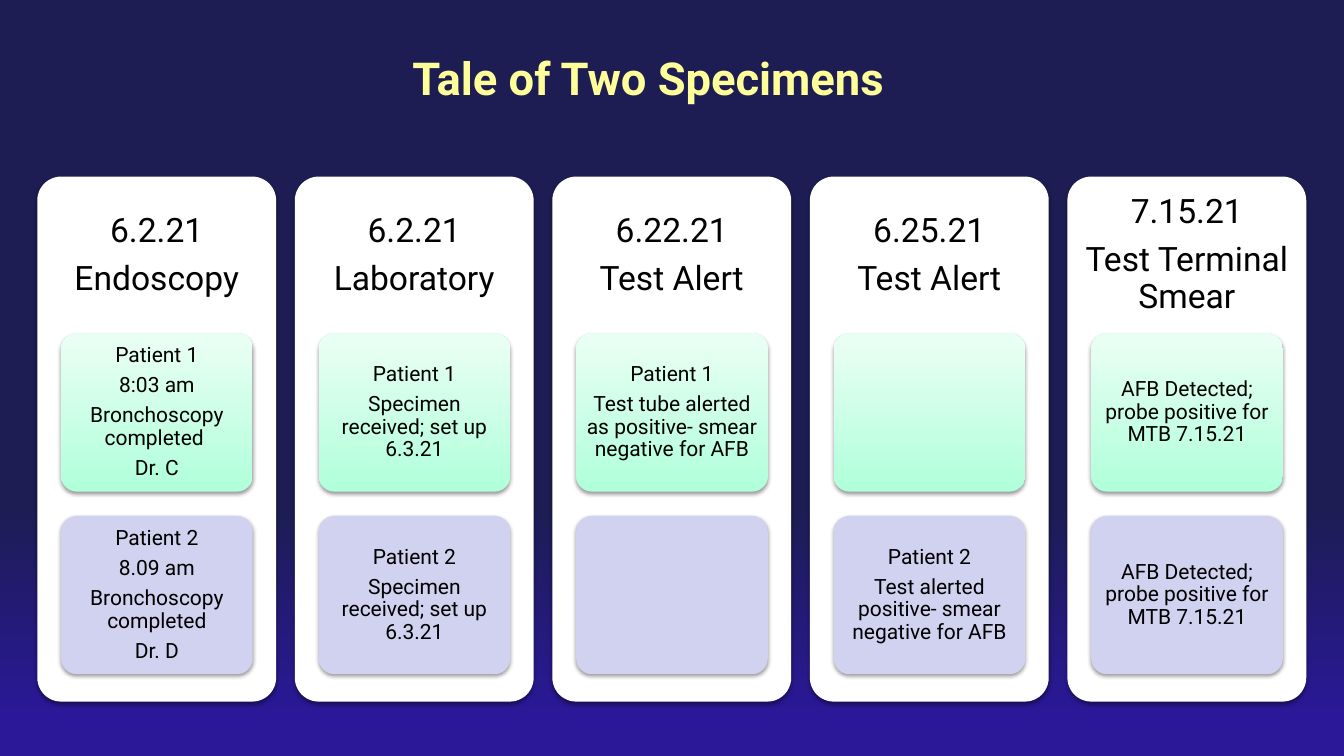
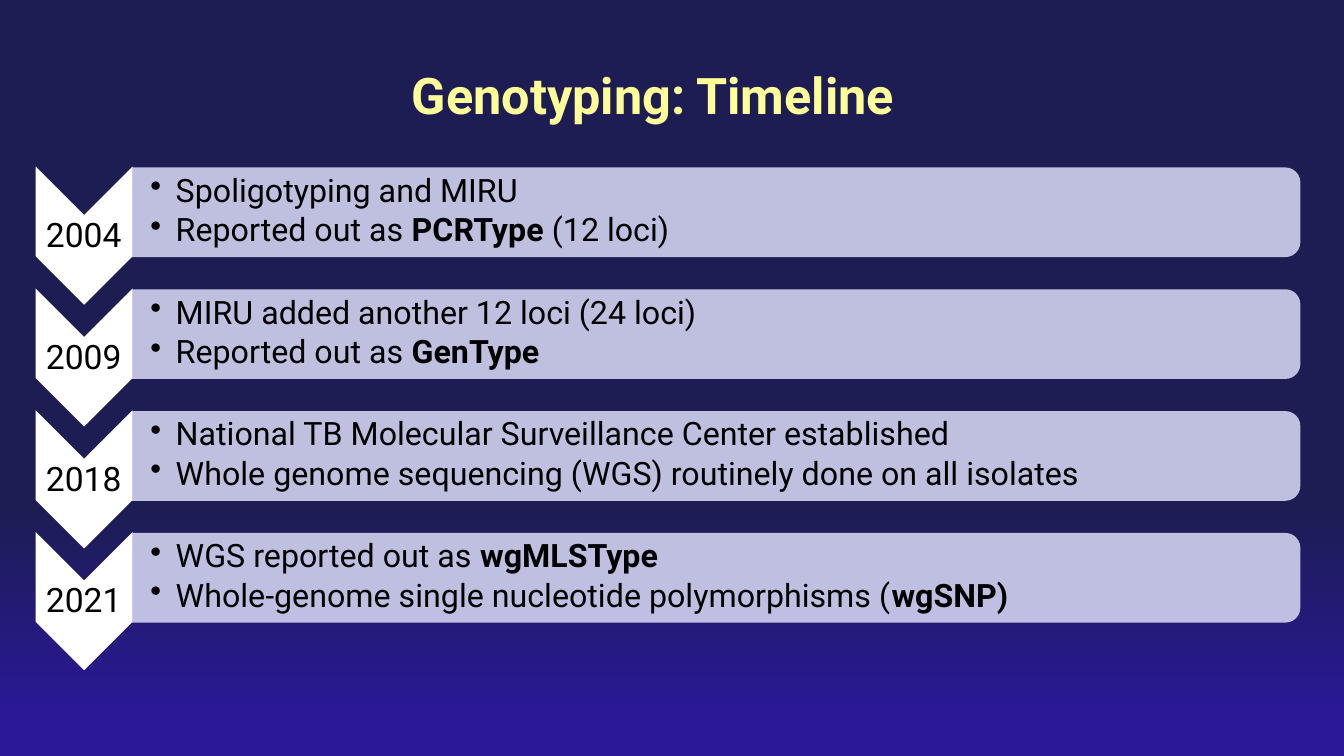
from lxml.etree import SubElement
from pptx import Presentation
from pptx.dml.color import RGBColor
from pptx.enum.shapes import MSO_SHAPE
from pptx.enum.text import MSO_ANCHOR, MSO_AUTO_SIZE, PP_ALIGN
from pptx.oxml.ns import qn
from pptx.util import Cm, Pt

FONT = "Roboto"
NAVY, VIOLET, YELLOW = "1D1D53", "2A1898", "FFFF99"
WHITE, BLACK, LILAC, MIST = "FFFFFF", "000000", "D1D1F0", "D1D1EF"
MINT, PALE = "B0FFDA", "EAFFF4"
rgb = RGBColor.from_string


def block(slide, kind, box, *fills):
    """Add a borderless shape; two fills make a gradient from bottom to top."""
    shape = slide.shapes.add_shape(kind, *map(Cm, box))
    shape.shadow.inherit = False
    shape.line.fill.background()
    if len(fills) == 1:
        shape.fill.solid()
        shape.fill.fore_color.rgb = rgb(fills[0])
    else:
        shape.fill.gradient()
        shape.fill.gradient_angle = 90
        for stop, fill in zip(shape.fill.gradient_stops, fills):
            stop.color.rgb = rgb(fill)
    return shape


def write(shape, lines, size, gap, pads, align=PP_ALIGN.CENTER):
    """Fill a shape with lines; *stars* mark bold, pads run left, top, right, bottom."""
    frame = shape.text_frame
    frame.word_wrap = True
    frame.vertical_anchor = MSO_ANCHOR.MIDDLE
    (frame.margin_left, frame.margin_top,
     frame.margin_right, frame.margin_bottom) = map(Cm, pads)
    frame.text = "\n".join(lines).replace("*", "")
    for para, line in zip(frame.paragraphs, lines):
        para.alignment = align
        para.line_spacing = 0.9
        para.space_after = Pt(size * gap)
        para.text = ""
        for i, bit in enumerate(line.split("*")):
            if bit:
                run = para.add_run()
                run.text = bit
                run.font.name = FONT
                run.font.size = Pt(size)
                run.font.bold = i % 2 == 1
                run.font.color.rgb = rgb(BLACK)


deck = Presentation()
deck.slide_width, deck.slide_height = Cm(33.87), Cm(19.05)

# Shared background
back = deck.slide_master.background.fill
back.gradient()
back.gradient_angle = 270
for stop, place, tone in zip(back.gradient_stops, (0.67, 0.95), (NAVY, VIOLET)):
    stop.position = place
    stop.color.rgb = rgb(tone)

# Slides and titles
slides = []
for text, size, box in [
    ("Tale of Two Specimens", 32.4, (1.73, 1.37, 29.21, 1.4)),
    ("Genotyping: Timeline", 36, (2.03, 1.09, 28.85, 2.18)),
]:
    slide = deck.slides.add_slide(deck.slide_layouts[5])
    title = slide.shapes.title
    title.left, title.top, title.width, title.height = map(Cm, box)
    frame = title.text_frame
    frame.text = text
    frame.auto_size = MSO_AUTO_SIZE.NONE
    frame.vertical_anchor = MSO_ANCHOR.BOTTOM
    para = frame.paragraphs[0]
    para.alignment = PP_ALIGN.CENTER
    font = para.runs[0].font
    font.name, font.size, font.bold = FONT, Pt(size), True
    font.color.rgb = rgb(YELLOW)
    slides.append(slide)
cases, genes = slides

# Five dated panels, each with a box per patient
setup = "Specimen received; set up 6.3.21"
found = ["AFB Detected; probe positive for MTB 7.15.21"]
panels = [
    (["6.2.21", "Endoscopy"],
     ["Patient 1", "8:03 am", "Bronchoscopy completed ", "Dr. C"],
     ["Patient 2", "8.09 am", "Bronchoscopy completed", "Dr. D"]),
    (["6.2.21", "Laboratory"], ["Patient 1", setup], ["Patient 2", setup]),
    (["6.22.21", "Test Alert"],
     ["Patient 1", "Test tube alerted as positive- smear negative for AFB"], []),
    (["6.25.21", "Test Alert"],
     [], ["Patient 2", "Test alerted positive- smear negative for AFB"]),
    (["7.15.21", "Test Terminal Smear"], found, found),
]
small = (0.1, 0.1, 0.1, 0.1)
for col, (head, first, second) in enumerate(panels):
    left = 0.94 + col * 6.49
    for lines, size, pads, box, fills in [
        (head, 24, (0.08, 0.08, 0.08, 9.35), (left, 4.45, 6.02, 13.23), (WHITE,)),
        (first, 15, small, (left + 0.6, 8.4, 4.83, 3.99), (MINT, PALE)),
        (second, 15, small, (left + 0.6, 13, 4.83, 3.99), (LILAC,)),
    ]:
        card = block(cases, MSO_SHAPE.ROUNDED_RECTANGLE, box, *fills)
        card.adjustments[0] = 0.1
        effect = card._element.spPr.find(qn("a:effectLst"))
        shade = SubElement(effect, qn("a:outerShdw"), blurRad=str(Pt(3.1)),
                           dist=str(Pt(1.6)), dir="5400000", rotWithShape="0")
        tone = SubElement(shade, qn("a:srgbClr"), val=BLACK)
        SubElement(tone, qn("a:alpha"), val="38000")
        if lines:
            write(card, lines, size, 0.35, pads)

# Timeline rows: chevron with year, bar with list
rows = [
    ("2004", ["Spoligotyping and MIRU", "Reported out as *PCRType *(12 loci)"]),
    ("2009", ["MIRU added another 12 loci (24 loci)", "Reported out as *GenType*"]),
    ("2018", ["National TB Molecular Surveillance Center established",
              "Whole genome sequencing (WGS) routinely done on all isolates"]),
    ("2021", ["WGS reported out as *wgMLSType*",
              "Whole-genome single nucleotide polymorphisms (*wgSNP)*"]),
]
for row, (year, items) in enumerate(rows):
    drop = row * 3.07
    mark = block(genes, MSO_SHAPE.CHEVRON, (0.38, 4.72 + drop, 3.48, 2.44), WHITE)
    bar = block(genes, MSO_SHAPE.ROUND_2_SAME_RECTANGLE,
                (16.92, drop - 9.37, 2.26, 29.44), MIST)
    mark.rotation = bar.rotation = 90
    tone = bar._element.spPr.find(qn("a:solidFill"))[0]
    SubElement(tone, qn("a:alpha"), val="90000")

    label = genes.shapes.add_textbox(Cm(0.89), Cm(5.44 + drop), Cm(2.44), Cm(1.04))
    write(label, [year], 24, 0.35, (0.05, 0.05, 0.05, 0.05))
    notes = genes.shapes.add_textbox(Cm(3.33), Cm(4.32 + drop), Cm(29.34), Cm(2.03))
    write(notes, items, 23, 0.15, (0.46, 0.05, 0.05, 0.05), PP_ALIGN.LEFT)
    for para in notes.text_frame.paragraphs:
        props = para._p.get_or_add_pPr()
        props.set("marL", str(Cm(0.64)))
        props.set("indent", str(-Cm(0.64)))
        SubElement(props, qn("a:buChar"), char="•")

deck.save("out.pptx")
